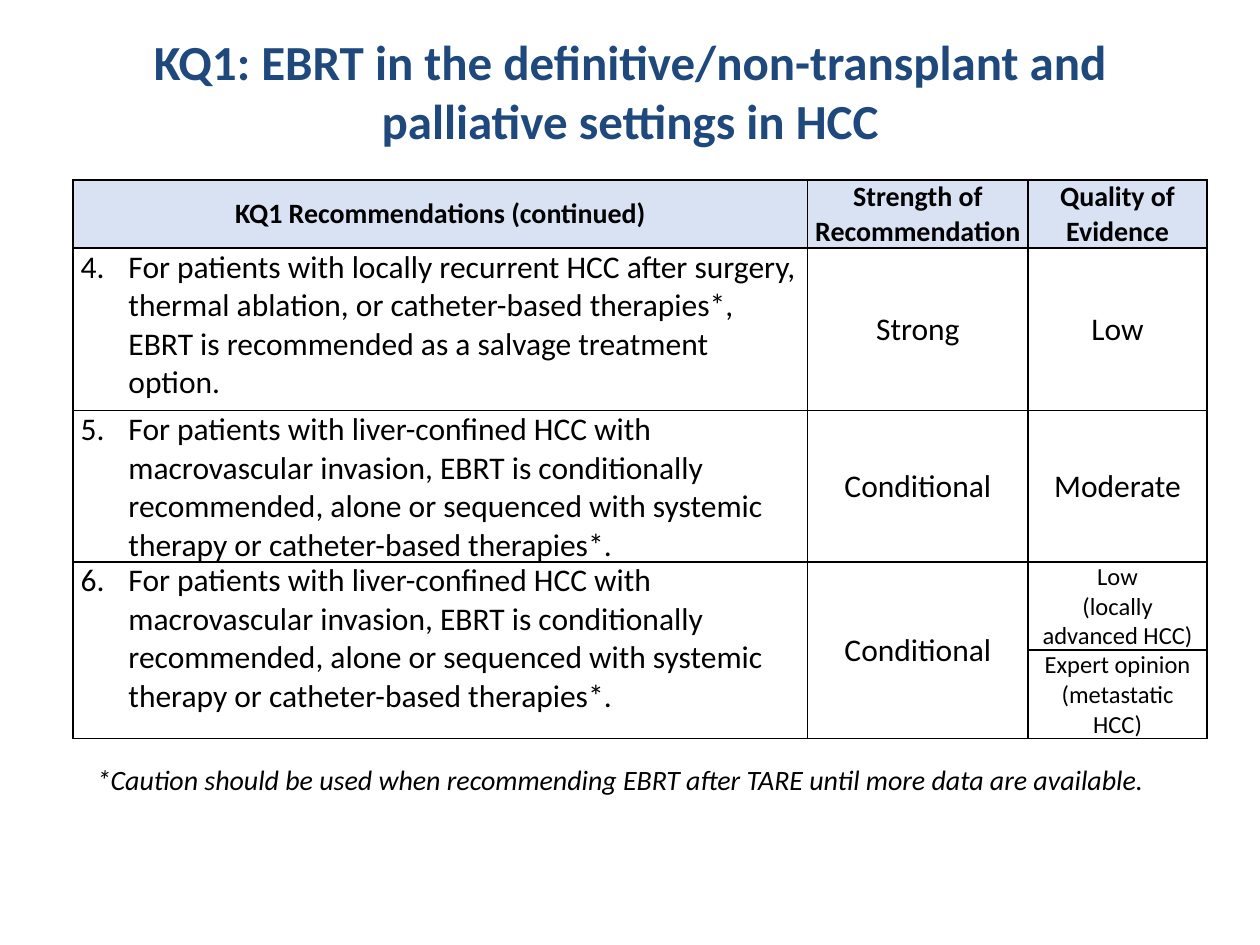
from lxml import etree
from pptx import Presentation
from pptx.dml.color import RGBColor
from pptx.enum.text import MSO_ANCHOR, PP_ALIGN
from pptx.oxml.ns import qn
from pptx.util import Inches, Pt

NAVY = RGBColor(0x1F, 0x49, 0x7D)
BLACK = RGBColor(0, 0, 0)
PALE = RGBColor(0xD9, 0xE2, 0xF3)
CENTER, LEFT = PP_ALIGN.CENTER, PP_ALIGN.LEFT
MIDDLE, TOP = MSO_ANCHOR.MIDDLE, MSO_ANCHOR.TOP
FONT = "Calibri"

TITLE = "KQ1: EBRT in the definitive/non-transplant and palliative settings in HCC"
NOTE = "*Caution should be used when recommending EBRT after TARE until more data are available."
SALVAGE = ("For patients with locally recurrent HCC after surgery, thermal ablation, "
           "or catheter-based therapies*, EBRT is recommended as a salvage treatment option.")
INVASION = ("For patients with liver-confined HCC with macrovascular invasion, EBRT is "
            "conditionally recommended, alone or sequenced with systemic therapy or "
            "catheter-based therapies*.")
ROWS = [
    [["KQ1 Recommendations (continued)"], ["Strength of", "Recommendation"],
     ["Quality of", "Evidence"]],
    [[SALVAGE], ["Strong"], ["Low"]],
    [[INVASION], ["Conditional"], ["Moderate"]],
    [[INVASION], ["Conditional"], ["Low", "(locally advanced HCC)"]],
    [[], [], ["Expert opinion (metastatic HCC)"]],
]
WIDTHS = [5.83, 1.75, 1.42]
HEIGHTS = [0.54, 1.29, 1.19, 0.6, 0.6]
FIRST = 4
SPLIT = 3


def write(frame, lines, size, color=BLACK, align=LEFT, bold=False, italic=False):
    for i, line in enumerate(lines):
        para = frame.paragraphs[0] if i == 0 else frame.add_paragraph()
        para.alignment = align
        run = para.add_run()
        run.text = line
        font = run.font
        font.name, font.size = FONT, Pt(size)
        font.bold, font.italic = bold, italic
        font.color.rgb = color


def add_text(slide, box, text, size, **look):
    frame = slide.shapes.add_textbox(*map(Inches, box)).text_frame
    frame.word_wrap = True
    write(frame, [text], size, **look)


def number(para, start):
    props = para._p.get_or_add_pPr()
    props.set("marL", str(Inches(0.38)))
    props.set("indent", str(-Inches(0.38)))
    etree.SubElement(props, qn("a:buFont"), typeface="+mj-lt")
    etree.SubElement(props, qn("a:buAutoNum"), type="arabicPeriod", startAt=str(start))


def border(cell):
    props = cell._tc.get_or_add_tcPr()
    for i, side in enumerate(("lnL", "lnR", "lnT", "lnB")):
        line = etree.Element(qn("a:" + side), w=str(Pt(1)))
        fill = etree.SubElement(line, qn("a:solidFill"))
        etree.SubElement(fill, qn("a:srgbClr"), val=str(BLACK))
        props.insert(i, line)


def add_grid(slide):
    grid = slide.shapes.add_table(
        len(ROWS), len(WIDTHS), Inches(0.58), Inches(1.43),
        Inches(sum(WIDTHS)), Inches(sum(HEIGHTS))).table
    grid.horz_banding = False
    for col, width in zip(grid.columns, WIDTHS):
        col.width = Inches(width)
    for row, height in zip(grid.rows, HEIGHTS):
        row.height = Inches(height)
    for c in (0, 1):
        grid.cell(SPLIT, c).merge(grid.cell(SPLIT + 1, c))
    for r, row in enumerate(ROWS):
        for c, lines in enumerate(row):
            cell = grid.cell(r, c)
            head, item = r == 0, r > 0 and c == 0
            cell.margin_left = cell.margin_right = Inches(0.06)
            cell.margin_top = cell.margin_bottom = 0
            cell.vertical_anchor = TOP if item else MIDDLE
            if head:
                cell.fill.solid()
                cell.fill.fore_color.rgb = PALE
            else:
                cell.fill.background()
            border(cell)
            if item and lines:
                number(cell.text_frame.paragraphs[0], FIRST + r - 1)
            size = 16 if head else 14 if c == 2 and r >= SPLIT else 18
            write(cell.text_frame, lines, size, align=LEFT if item else CENTER, bold=head)


def main():
    deck = Presentation()
    deck.slide_width, deck.slide_height = Inches(10), Inches(7.5)
    slide = deck.slides.add_slide(deck.slide_layouts[6])
    add_text(slide, (0.5, 0.2, 9, 1.25), TITLE, 28, color=NAVY, align=CENTER, bold=True)
    add_grid(slide)
    add_text(slide, (0.67, 6, 8.67, 0.67), NOTE, 16, italic=True)
    deck.save("out.pptx")


if __name__ == "__main__":
    main()
